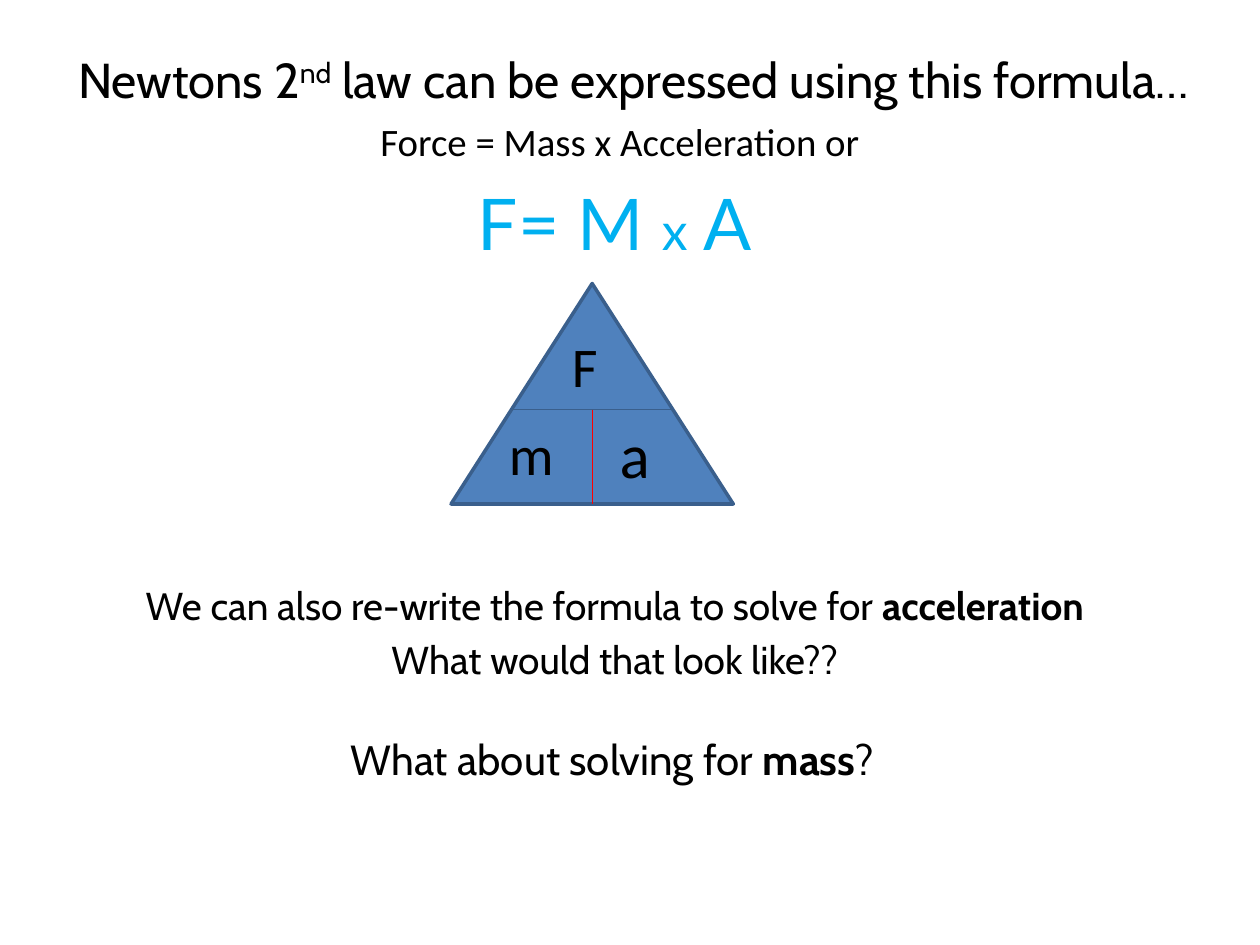
from pptx import Presentation
from pptx import util as u
from pptx.dml.color import RGBColor
from pptx.enum import shapes, text
from pptx.oxml.ns import qn

COLORS = {
    "ink": "000000",
    "formula": "00B0F0",
    "triangle": "4F81BD",
    "outline": "3A5F8C",
    "divider": "FF0000",
}


class FormulaSlide:
    def __init__(self, presentation):
        self.slide = presentation.slides.add_slide(presentation.slide_layouts[1])

    def color(self, name):
        return RGBColor.from_string(COLORS[name])

    def place(self, item, box):
        for side, length in zip(("left", "top", "width", "height"), box):
            setattr(item, side, u.Inches(length))

    def add_runs(self, paragraph, runs, **base):
        for words, changes in runs:
            style = {"size": 24, "name": "Cabin", "color": "ink", **base, **changes}
            run = paragraph.add_run()
            run.text = words
            run.font.color.rgb = self.color(style.pop("color"))
            style["size"] = u.Pt(style["size"])
            raised = style.pop("raised", False)
            for key, value in style.items():
                setattr(run.font, key, value)
            if raised:
                run.font._element.set("baseline", "30000")

    def title(self, box, runs, **base):
        heading = self.slide.shapes.title
        self.place(heading, box)
        heading.text_frame.auto_size = text.MSO_AUTO_SIZE.NONE
        self.add_runs(heading.text_frame.paragraphs[0], runs, **base)

    def body(self, box, lines):
        content = self.slide.placeholders[1]
        self.place(content, box)
        frame = content.text_frame
        frame.auto_size = text.MSO_AUTO_SIZE.NONE
        for index, (space, runs) in enumerate(lines):
            paragraph = frame.paragraphs[0] if index == 0 else frame.add_paragraph()
            paragraph.alignment = text.PP_ALIGN.CENTER
            paragraph.space_before = u.Pt(space)
            properties = paragraph._p.get_or_add_pPr()
            for key in ("marL", "indent"):
                properties.set(key, "0")
            properties.append(properties.makeelement(qn("a:buNone"), {}))
            self.add_runs(paragraph, runs)

    def label(self, box, runs, align=text.PP_ALIGN.LEFT, **base):
        caption = self.slide.shapes.add_textbox(*map(u.Inches, box))
        caption.text_frame.word_wrap = True
        paragraph = caption.text_frame.paragraphs[0]
        paragraph.alignment = align
        self.add_runs(paragraph, runs, **base)

    def triangle(self, box):
        triangle = self.slide.shapes.add_shape(
            shapes.MSO_SHAPE.ISOSCELES_TRIANGLE, *map(u.Inches, box))
        triangle.shadow.inherit = False
        triangle.fill.solid()
        triangle.fill.fore_color.rgb = self.color("triangle")
        triangle.line.color.rgb = self.color("outline")
        triangle.line.width = u.Pt(2)

    def divider(self, start, end, color):
        divider = self.slide.shapes.add_connector(
            shapes.MSO_CONNECTOR.STRAIGHT, *map(u.Inches, start + end))
        divider.line.color.rgb = self.color(color)
        divider.line.width = u.Pt(0.75)
        properties = divider._element.spPr
        properties.append(properties.makeelement(qn("a:effectLst"), {}))


def main():
    presentation = Presentation()
    presentation.slide_width = u.Inches(10)
    presentation.slide_height = u.Inches(7.5)
    law = FormulaSlide(presentation)

    law.title((0.4, 0, 9.25, 1.25), [
        ("Newtons 2", {}),
        ("nd", {"raised": True}),
        (" law can be expressed using this formula…", {}),
    ], size=28)

    words = {"name": "Calibri", "size": 22.2}
    symbols = {"name": "Lato", "size": 40.7, "color": "formula"}
    prompt = {"size": 22.2}
    law.body((0.38, 0.83, 9, 4.75), [
        (5, [(" ", {**words, "size": 25.9}),
             ("Force = Mass x Acceleration or", words)]),
        (8, [("F= M ", symbols), ("x", {**symbols, "size": 29.6}), (" A", symbols)]),
        (181, [("We can also re-write the formula to solve for ", prompt),
               ("acceleration", {**prompt, "bold": True})]),
        (4.4, [("What would that look like??", prompt)]),
    ])

    law.label((1.86, 5.77, 6, 0.5), [
        ("What about solving for ", {}),
        ("mass", {"bold": True}),
        ("?", {}),
    ], align=text.PP_ALIGN.CENTER)

    law.triangle((3.58, 2.25, 2.24, 1.75))
    for letter, size, box in (
        ("F", 32, (4.44, 2.58, 0.75, 0.64)),
        ("m", 32, (3.94, 3.28, 1.25, 0.64)),
        ("a", 36, (4.82, 3.25, 1.25, 0.71)),
    ):
        law.label(box, [(letter, {})], size=size, name="Calibri")
    law.divider((4.05, 3.25), (5.35, 3.25), "outline")
    law.divider((4.7, 3.25), (4.7, 4), "divider")

    presentation.save("out.pptx")


if __name__ == "__main__":
    main()
